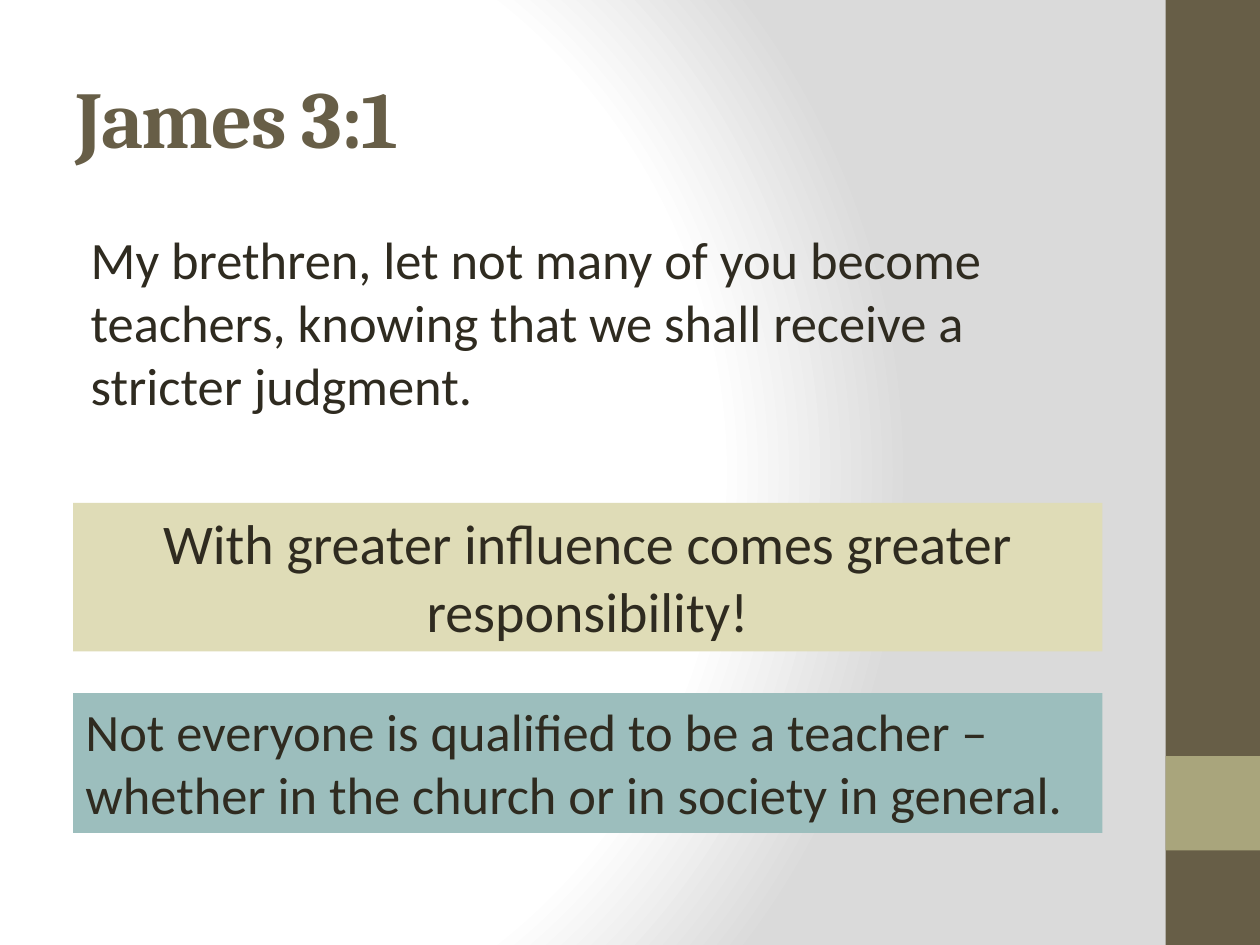
from pptx import Presentation
from pptx.dml.color import RGBColor
from pptx.enum.shapes import MSO_SHAPE
from pptx.enum.text import MSO_ANCHOR, MSO_AUTO_SIZE, PP_ALIGN
from pptx.oxml import parse_xml
from pptx.oxml.ns import nsdecls
from pptx.util import Inches, Pt

BROWN = RGBColor(0x67, 0x5E, 0x47)
OLIVE = RGBColor(0xA9, 0xA5, 0x7C)
SAND = RGBColor(0xDF, 0xDC, 0xB7)
TEAL = RGBColor(0x9C, 0xBE, 0xBD)
INK = RGBColor(0x2F, 0x2B, 0x20)

BACKGROUND = f"""
<p:bg {nsdecls("p", "a")}><p:bgPr>
  <a:gradFill rotWithShape="1">
    <a:gsLst>
      <a:gs pos="0"><a:srgbClr val="FFFFFF"/></a:gs>
      <a:gs pos="75000"><a:srgbClr val="FFFFFF"/></a:gs>
      <a:gs pos="100000"><a:srgbClr val="DADADA"/></a:gs>
    </a:gsLst>
    <a:path path="circle">
      <a:fillToRect l="20000" t="50000" r="100000" b="50000"/>
    </a:path>
  </a:gradFill>
  <a:effectLst/>
</p:bgPr></p:bg>"""


def add_block(left, top, width, height, color):
    block = slide.shapes.add_shape(
        MSO_SHAPE.RECTANGLE, Inches(left), Inches(top), Inches(width), Inches(height))
    block.shadow.inherit = False
    block.fill.solid()
    block.fill.fore_color.rgb = color
    block.line.fill.background()
    return block


def write(shape, text, size, align=PP_ALIGN.LEFT, font="Calibri", color=INK):
    """Fill the shape with one formatted paragraph and return that paragraph."""
    frame = shape.text_frame
    frame.text = text
    frame.word_wrap = True
    para = frame.paragraphs[0]
    para.alignment = align
    span = para.runs[0]
    span.font.name = font
    span.font.size = Pt(size)
    span.font.color.rgb = color
    return para


deck = Presentation()
deck.slide_width, deck.slide_height = Inches(10), Inches(7.5)
slide = deck.slides.add_slide(deck.slide_layouts[1])
slide.element.cSld.insert(0, parse_xml(BACKGROUND))

# Side band
add_block(9.25, 0, 0.75, 7.5, BROWN)
add_block(9.25, 6, 0.75, 0.75, OLIVE)

# Title and verse
title, verse = slide.placeholders
for placeholder, top, height in ((title, 0.3, 1.25), (verse, 1.75, 1.92)):
    placeholder.left, placeholder.top = Inches(0.5), Inches(top)
    placeholder.width, placeholder.height = Inches(8.33), Inches(height)
    placeholder.text_frame.auto_size = MSO_AUTO_SIZE.NONE

title.text_frame.vertical_anchor = MSO_ANCHOR.MIDDLE
heading = write(title, "James 3:1", 46, font="Cambria", color=BROWN)
heading.runs[0].font.bold = True
heading.runs[0].font._element.set("spc", "-100")

quote = write(
    verse,
    "My brethren, let not many of you become teachers, "
    "knowing that we shall receive a stricter judgment.",
    30)
quote.space_before = Pt(6)
properties = quote._p.get_or_add_pPr()
properties.set("marL", str(Inches(0.12)))
properties.set("indent", "0")
properties.append(parse_xml(f"<a:buNone {nsdecls('a')}/>"))

# Lessons
lessons = (
    (3.99, 1.18, SAND, 32, PP_ALIGN.CENTER,
     "With greater influence comes greater responsibility!"),
    (5.5, 1.11, TEAL, 30, PP_ALIGN.LEFT,
     "Not everyone is qualified to be a teacher – "
     "whether in the church or in society in general."),
)
for top, height, color, size, align, text in lessons:
    box = add_block(0.58, top, 8.17, height, color)
    box.text_frame.vertical_anchor = MSO_ANCHOR.TOP
    box.text_frame.auto_size = MSO_AUTO_SIZE.SHAPE_TO_FIT_TEXT
    write(box, text, size, align)

deck.save("out.pptx")
